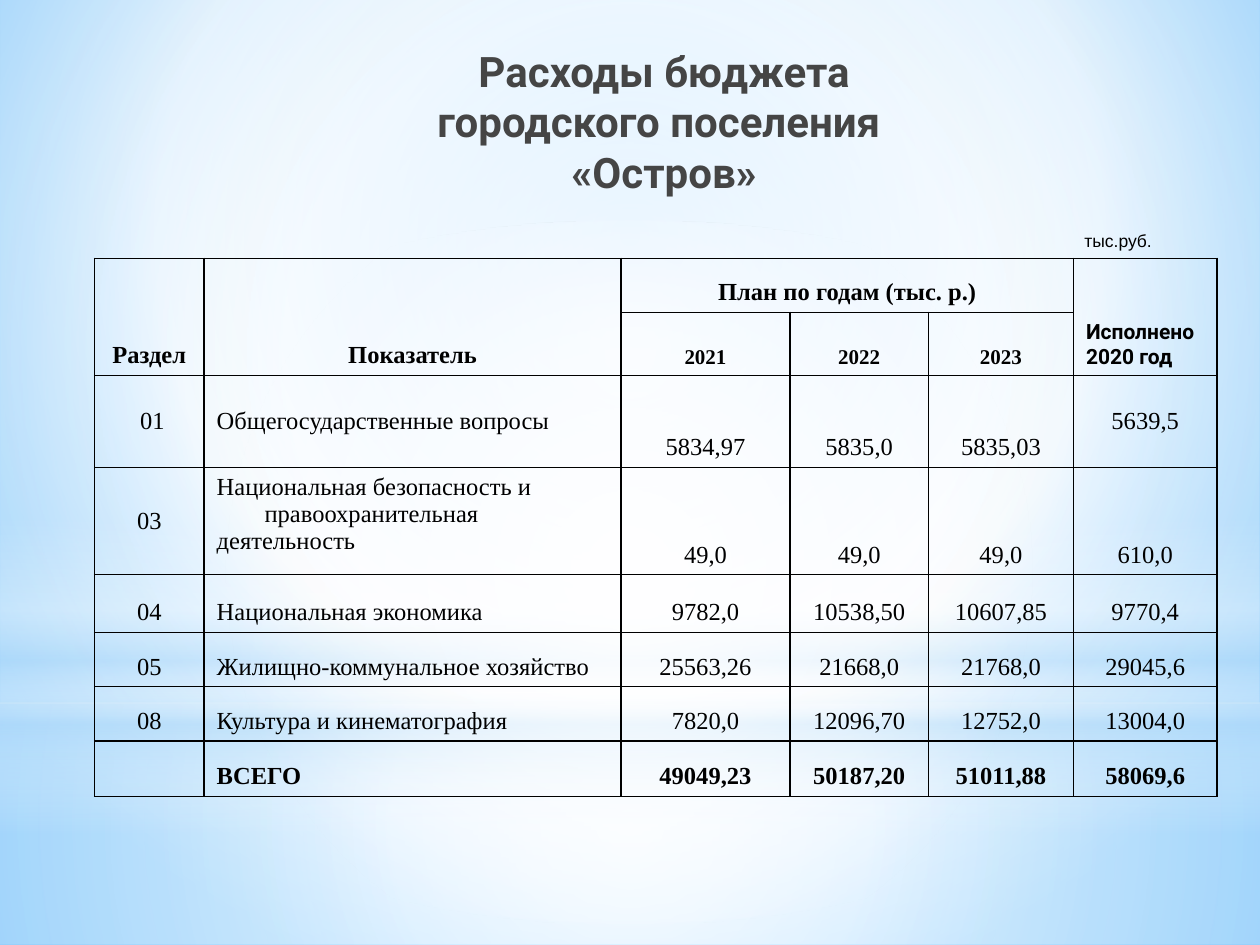
from lxml import etree
from pptx import Presentation
from pptx.dml.color import RGBColor
from pptx.enum.shapes import MSO_SHAPE
from pptx.enum.text import MSO_ANCHOR, PP_ALIGN
from pptx.oxml.ns import qn
from pptx.util import Emu, Inches, Pt

LEFT, CENTER, RIGHT, JUSTIFY = PP_ALIGN.LEFT, PP_ALIGN.CENTER, PP_ALIGN.RIGHT, PP_ALIGN.JUSTIFY
TOP, MIDDLE, BOTTOM = MSO_ANCHOR.TOP, MSO_ANCHOR.MIDDLE, MSO_ANCHOR.BOTTOM
RECT, OVAL = MSO_SHAPE.RECTANGLE, MSO_SHAPE.OVAL

THEME = {
    "ink": "000000", "title_ink": "454545",
    "white": "FFFFFF", "haze": "B4DCFA", "sky": "9ED5FF", "deep_sky": "5BB9FF",
    "title_font": "Roboto", "table_font": "Times New Roman", "unit_font": "Arial",
    "title": 24, "body": 14, "small": 12, "unit": 10,
    "border": 1, "hang": 0.38,
}
WHITE, HAZE = THEME["white"], THEME["haze"]
SLIDE_W, SLIDE_H = 10, 7.5

# Gradient stops: position %, colour, opacity %
SKY = [(0, THEME["sky"], 100), (60, WHITE, 100), (100, THEME["deep_sky"], 100)]
SKY_FOCUS = (20, 10, 20, 60)
MIDPOINT = (50, 50, 50, 50)
HORIZON = 5.58
LAYERS = [
    (RECT, (0, HORIZON, SLIDE_W, SLIDE_H - HORIZON),
     [(0, WHITE, 91), (37, WHITE, 76), (100, HAZE, 79)], MIDPOINT),
    (RECT, (0, 0, SLIDE_W, HORIZON),
     [(0, WHITE, 89), (48, WHITE, 62), (100, HAZE, 79)], MIDPOINT),
    (RECT, (0, 4.12, SLIDE_W, 2.5),
     [(0, WHITE, 0), (29, WHITE, 30), (45, HAZE, 40), (55, WHITE, 26),
      (65, HAZE, 60), (100, WHITE, 0)], None),
    (OVAL, (0, 1.75, SLIDE_W, HORIZON), [(0, WHITE, 100), (56, WHITE, 0)], MIDPOINT),
]

TITLE = [" Расходы бюджета\vгородского поселения", " «Остров»"]
UNIT = "тыс.руб."
YEARS = ["2021", "2022", "2023"]
EXPENSES = [
    [" 01", "Общегосударственные вопросы", "5834,97", "5835,0", "5835,03", "5639,5"],
    ["03", "Национальная безопасность и правоохранительная\nдеятельность",
     "49,0", "49,0", "49,0", "610,0"],
    ["04", "Национальная экономика", "9782,0", "10538,50", "10607,85", "9770,4"],
    ["05", "Жилищно-коммунальное хозяйство", "25563,26", "21668,0", "21768,0", "29045,6"],
    ["08", "Культура и кинематография", "7820,0", "12096,70", "12752,0", "13004,0"],
    ["", "ВСЕГО", "49049,23", "50187,20", "51011,88", "58069,6"],
]
# Row and column in the table, row span, column span, wording
HEADINGS = [
    (0, 0, 2, 1, "Раздел"), (0, 1, 2, 1, "Показатель"),
    (0, 2, 1, 3, "План по годам (тыс. р.)"), (0, 5, 2, 1, "Исполнено 2020 год"),
] + [(1, 2 + i, 1, 1, year) for i, year in enumerate(YEARS)]
# Places in EXPENSES that do not sit on the cell's bottom
ANCHORS = {(0, 0): MIDDLE, (0, 1): MIDDLE, (0, 5): MIDDLE, (1, 0): MIDDLE, (1, 1): TOP}
COLUMNS = [0.87, 3.31, 1.34, 1.1, 1.15, 1.14]
ROWS = [0.43, 0.38, 0.73, 0.85, 0.46, 0.43, 0.43, 0.44]
TABLE_AT = (0.75, 2.05)


def gradient(stops, focus):
    """Return a gradFill: circular around focus, or top to bottom without one."""
    fill = etree.Element(qn("a:gradFill"), rotWithShape="1")
    stop_list = etree.SubElement(fill, qn("a:gsLst"))
    for position, colour, opacity in stops:
        stop = etree.SubElement(stop_list, qn("a:gs"), pos=str(position * 1000))
        tint = etree.SubElement(stop, qn("a:srgbClr"), val=colour)
        if opacity < 100:
            etree.SubElement(tint, qn("a:alpha"), val=str(opacity * 1000))
    if focus:
        path = etree.SubElement(fill, qn("a:path"), path="circle")
        sides = {side: str(share * 1000) for side, share in zip("ltrb", focus)}
        etree.SubElement(path, qn("a:fillToRect"), **sides)
    else:
        etree.SubElement(fill, qn("a:lin"), ang="5400000", scaled="0")
    return fill


def set_gradient(owner, element, stops, focus):
    owner.fill.solid()
    solid = element.find(".//" + qn("a:solidFill"))
    solid.getparent().replace(solid, gradient(stops, focus))


def write(frame, paragraphs, *, font=THEME["table_font"], size=THEME["body"],
          colour=THEME["ink"], bold=False, align=CENTER, hang=0):
    frame.word_wrap = True
    for i, wording in enumerate(paragraphs):
        paragraph = frame.paragraphs[0] if i == 0 else frame.add_paragraph()
        paragraph.text = wording
        paragraph.alignment = align
        if hang:
            properties = paragraph._p.get_or_add_pPr()
            properties.set("marL", str(Inches(hang)))
            properties.set("indent", str(-Inches(hang)))
        paragraph.font.size = Pt(size)
        for run in paragraph.runs:
            run.font.name, run.font.size, run.font.bold = font, Pt(size), bold
            run.font.color.rgb = RGBColor.from_string(colour)


def add_text(slide, at, paragraphs, top_inset=0.05, **text_format):
    box = slide.shapes.add_textbox(*map(Inches, at))
    box.text_frame.margin_top = Inches(top_inset)
    write(box.text_frame, paragraphs, **text_format)


def frame_cell(cell):
    """Draw all four borders and leave the cell clear."""
    properties = cell._tc.get_or_add_tcPr()
    for side in ("lnL", "lnR", "lnT", "lnB"):
        line = etree.SubElement(properties, qn("a:" + side), w=str(Pt(THEME["border"])))
        ink = etree.SubElement(line, qn("a:solidFill"))
        etree.SubElement(ink, qn("a:srgbClr"), val=THEME["ink"])
    cell.fill.background()


def add_budget_table(slide):
    size = (sum(COLUMNS), sum(ROWS))
    table = slide.shapes.add_table(
        len(ROWS), len(COLUMNS), *map(Inches, TABLE_AT + size)).table
    table.first_row = table.horz_banding = False
    for parts, lengths, side in ((table.columns, COLUMNS, "width"), (table.rows, ROWS, "height")):
        for part, length in zip(parts, lengths):
            setattr(part, side, Inches(length))
    for cell in table.iter_cells():
        frame_cell(cell)
        cell.vertical_anchor = BOTTOM

    for row, column, down, across, wording in HEADINGS:
        cell = table.cell(row, column)
        if down * across > 1:
            cell.merge(table.cell(row + down - 1, column + across - 1))
        executed = column == len(COLUMNS) - 1
        write(cell.text_frame, [wording], bold=True,
              size=THEME["small"] if executed or row else THEME["body"],
              font=THEME["title_font"] if executed else THEME["table_font"],
              align=LEFT if executed else CENTER,
              hang=0 if executed else THEME["hang"])

    first_row = len(ROWS) - len(EXPENSES)
    for i, record in enumerate(EXPENSES):
        for column, wording in enumerate(record):
            cell = table.cell(first_row + i, column)
            cell.vertical_anchor = ANCHORS.get((i, column), BOTTOM)
            name_align = JUSTIFY if record[0] == "04" else LEFT
            write(cell.text_frame, wording.split("\n"), hang=THEME["hang"],
                  bold=i == len(EXPENSES) - 1,
                  align=name_align if column == 1 else CENTER)


def main():
    deck = Presentation()
    deck.slide_width, deck.slide_height = Inches(SLIDE_W), Inches(SLIDE_H)
    slide = deck.slides.add_slide(deck.slide_layouts[6])
    set_gradient(slide.background, slide.element, SKY, SKY_FOCUS)
    for outline, at, stops, focus in LAYERS:
        layer = slide.shapes.add_shape(outline, *(Emu(Inches(n)) for n in at))
        layer.shadow.inherit = False
        layer.line.fill.background()
        set_gradient(layer, layer.element, stops, focus)
    add_text(slide, (0.98, 0.28, 8.5, 1.25), TITLE, top_inset=0.08, bold=True,
             font=THEME["title_font"], size=THEME["title"], colour=THEME["title_ink"])
    add_budget_table(slide)
    add_text(slide, (7.68, 1.78, 1.56, 0.27), [UNIT], align=RIGHT,
             font=THEME["unit_font"], size=THEME["unit"])
    deck.save("out.pptx")


if __name__ == "__main__":
    main()
